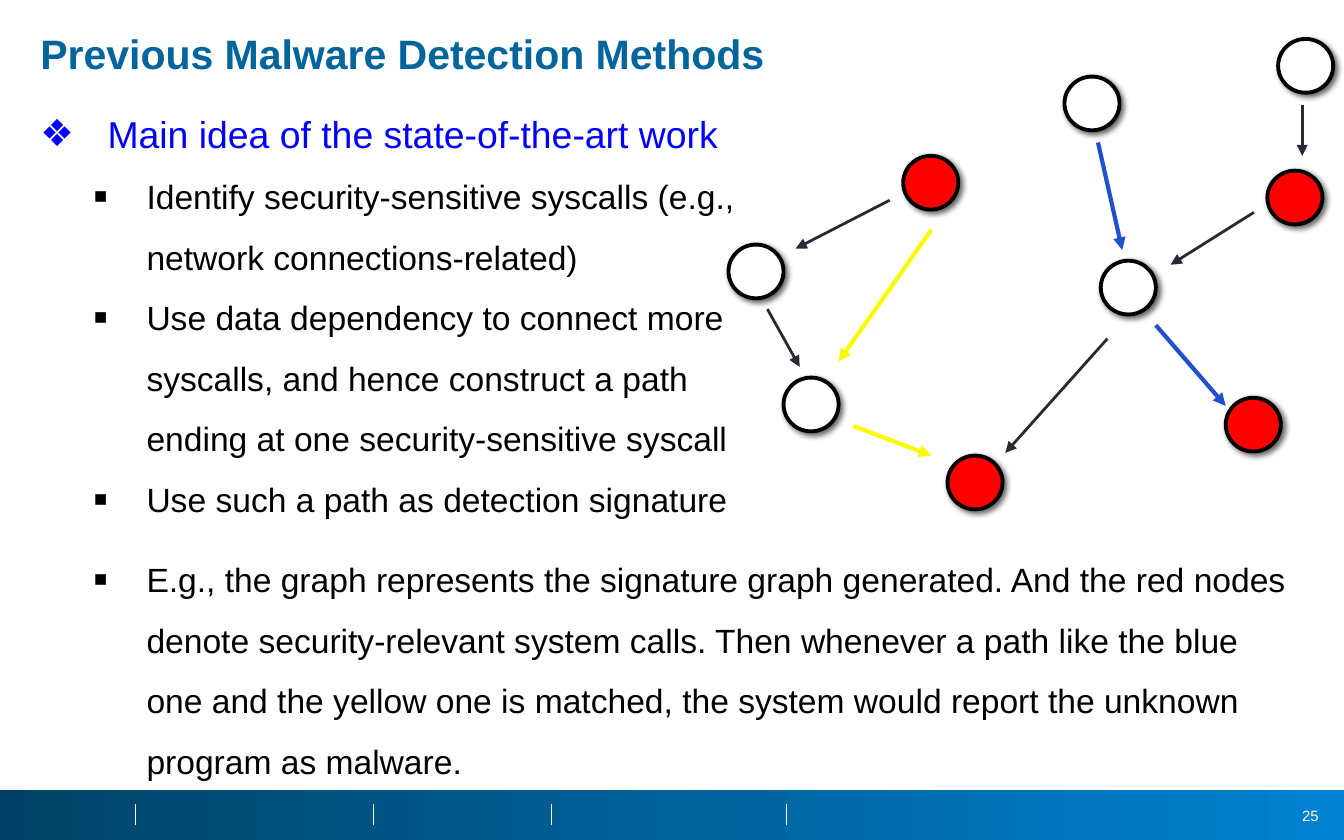
from lxml import etree
from pptx import Presentation
from pptx.dml.color import RGBColor
from pptx.enum.shapes import MSO_CONNECTOR as Connector, MSO_SHAPE as Shape
from pptx.enum.text import MSO_ANCHOR as Anchor, MSO_AUTO_SIZE as AutoSize, PP_ALIGN as Align
from pptx.oxml.ns import qn
from pptx.util import Inches, Pt

COLORS = {
    "title": "00649D", "heading": "0000FF", "text": "000000", "white": "FFFFFF",
    "bar_start": "004266", "bar_end": "0081D0", "tick": "F2F2F2",
    "plain": "FFFFFF", "sensitive": "FF0000", "outline": "000000",
    "dark": "292934", "yellow": "FAFB00", "blue": "214FCF",
}
LEVELS = {
    0: {"mark": "❖", "scale": 100, "margin": 0.5, "hang": 0.5, "size": 20, "color": "heading"},
    1: {"mark": "■", "scale": 65, "margin": 0.79, "hang": 0.39, "size": 18, "color": "text"},
}
MAIN_IDEA = [
    (0, "Main idea of the state-of-the-art work"),
    (1, "Identify security-sensitive syscalls (e.g., network connections-related)"),
    (1, "Use data dependency to connect more syscalls, and hence construct a path "
        "ending at one security-sensitive syscall"),
    (1, "Use such a path as detection signature"),
]
EXAMPLE = [
    (1, "E.g., the graph represents the signature graph generated. And the red nodes "
        "denote security-relevant system calls. Then whenever a path like the blue one "
        "and the yellow one is matched, the system would report the unknown program "
        "as malware."),
]
NODE_SIZE = (0.41, 0.4)
NODES = [
    (2.5, 0.28, "plain"), (4.09, 0, "plain"), (4.01, 0.98, "sensitive"),
    (2.77, 1.65, "plain"), (1.63, 3.1, "sensitive"), (1.3, 0.87, "sensitive"),
    (0, 1.53, "plain"), (0.41, 2.52, "plain"), (3.7, 2.67, "sensitive"),
]
EDGE_WIDTHS = {"dark": 1.5, "yellow": 2.25, "blue": 2.25}
EDGES = [
    (1.2, 1.2, 0.5, 1.56, "dark"), (0.29, 2.01, 0.53, 2.44, "dark"),
    (1.51, 1.42, 0.82, 2.4, "yellow"), (0.93, 2.88, 1.51, 3.1, "yellow"),
    (2.75, 0.77, 2.93, 1.57, "blue"), (3.18, 2.13, 3.7, 2.73, "blue"),
    (2.82, 2.23, 2.06, 3.08, "dark"), (4.27, 0.49, 4.27, 0.87, "dark"),
    (3.91, 1.29, 3.29, 1.68, "dark"),
]


def rgb(name):
    return RGBColor.from_string(COLORS[name])


def add_child(parent, tag, **values):
    child = etree.SubElement(parent, qn(tag))
    for key, value in values.items():
        child.set(key, str(value))
    return child


def place(shape, box):
    for name, value in zip(("left", "top", "width", "height"), box):
        setattr(shape, name, Inches(value))


def set_font(font, size, color, bold=False):
    for name, value in {"name": "Arial", "size": Pt(size), "bold": bold}.items():
        setattr(font, name, value)
    font.color.rgb = rgb(color)


def set_frame(frame, anchor=Anchor.TOP):
    settings = {"word_wrap": True, "auto_size": AutoSize.NONE, "vertical_anchor": anchor}
    for name, value in settings.items():
        setattr(frame, name, value)


def set_paragraph(para, spacing, align=Align.LEFT):
    settings = {"line_spacing": spacing, "space_before": Pt(0), "space_after": Pt(0),
                "alignment": align}
    for name, value in settings.items():
        setattr(para, name, value)


def add_line(shapes, start, end, color, width, arrow=False):
    ends = [Inches(value) for value in (*start, *end)]
    line = shapes.add_connector(Connector.STRAIGHT, *ends)
    line.line.color.rgb = rgb(color)
    line.line.width = Pt(width)
    if arrow:
        add_child(line.line._get_or_add_ln(), "a:tailEnd", type="triangle")
    add_child(line._element.spPr, "a:effectLst")


def fill_title(title, box):
    place(title, box)
    frame = title.text_frame
    set_frame(frame)
    para = frame.paragraphs[0]
    para.text = "Previous Malware Detection Methods"
    set_paragraph(para, 0.9)
    set_font(para.runs[0].font, 22, "title", True)


def fill_list(body, box, items):
    place(body, box)
    frame = body.text_frame
    set_frame(frame)
    for index, (level, text) in enumerate(items):
        para = frame.paragraphs[0] if index == 0 else frame.add_paragraph()
        look = LEVELS[level]
        para.text = text
        para.level = level
        props = para._p.get_or_add_pPr()
        props.set("marL", str(Inches(look["margin"])))
        props.set("indent", str(-Inches(look["hang"])))
        add_child(add_child(props, "a:buClr"), "a:srgbClr", val=COLORS[look["color"]])
        add_child(props, "a:buSzPct", val=look["scale"] * 1000)
        add_child(props, "a:buFont", typeface="Arial")
        add_child(props, "a:buChar", char=look["mark"])
        set_paragraph(para, 1.5)
        set_font(para.runs[0].font, look["size"], look["color"])


def add_node(shapes, box, color):
    node = shapes.add_shape(Shape.OVAL, *[Inches(value) for value in box])
    node.fill.solid()
    node.fill.fore_color.rgb = rgb(color)
    node.line.color.rgb = rgb("outline")
    node.line.width = Pt(2.08)
    node.shadow.inherit = False
    effects = node._element.spPr.find(qn("a:effectLst"))
    shadow = add_child(effects, "a:outerShdw", blurRad=Pt(3), dist=Pt(2),
                       dir=45 * 60000, rotWithShape=0)
    add_child(add_child(shadow, "a:srgbClr", val="000000"), "a:alpha", val=60000)


def add_graph(page, box):
    left, top = box[:2]
    shapes = page.shapes.add_group_shape().shapes
    for x, y, color in NODES:
        add_node(shapes, (left + x, top + y, *NODE_SIZE), color)
    for x1, y1, x2, y2, color in EDGES:
        add_line(shapes, (left + x1, top + y1), (left + x2, top + y2),
                 color, EDGE_WIDTHS[color], True)


def add_footer(page, box):
    left, top, width, _ = box
    bar = page.shapes.add_shape(Shape.RECTANGLE, *[Inches(value) for value in box])
    bar.shadow.inherit = False
    bar.line.fill.background()
    bar.fill.gradient()
    bar.fill.gradient_angle = 0
    for stop, color, position in zip(bar.fill.gradient_stops, ("bar_start", "bar_end"), (0, 1)):
        stop.color.rgb = rgb(color)
        stop.position = position
    for x in (1.01, 2.78, 4.1, 5.85):
        add_line(page.shapes, (left + x, top + 0.1), (left + x, top + 0.26), "tick", 0.25)
    number = page.shapes.add_textbox(0, 0, 0, 0)
    place(number, (left + width - 0.51, top + 0.07, 0.42, 0.24))
    set_frame(number.text_frame, Anchor.MIDDLE)
    para = number.text_frame.paragraphs[0]
    para.text = "25"
    set_paragraph(para, 1.0, Align.RIGHT)
    set_font(para.runs[0].font, 8, "white")


def main():
    deck = Presentation()
    deck.slide_width, deck.slide_height = Inches(10), Inches(6.25)
    page = deck.slides.add_slide(deck.slide_layouts[3])
    title, idea, example = page.placeholders
    add_footer(page, (0, 5.88, 10, 0.38))
    fill_title(title, (0.2, 0.2, 9.59, 0.36))
    fill_list(idea, (0.2, 0.61, 5.54, 3.33), MAIN_IDEA)
    add_graph(page, (5.42, 0.29, 4.5, 3.5))
    fill_list(example, (0.2, 3.96, 9.59, 1.92), EXAMPLE)
    deck.save("out.pptx")


if __name__ == "__main__":
    main()
